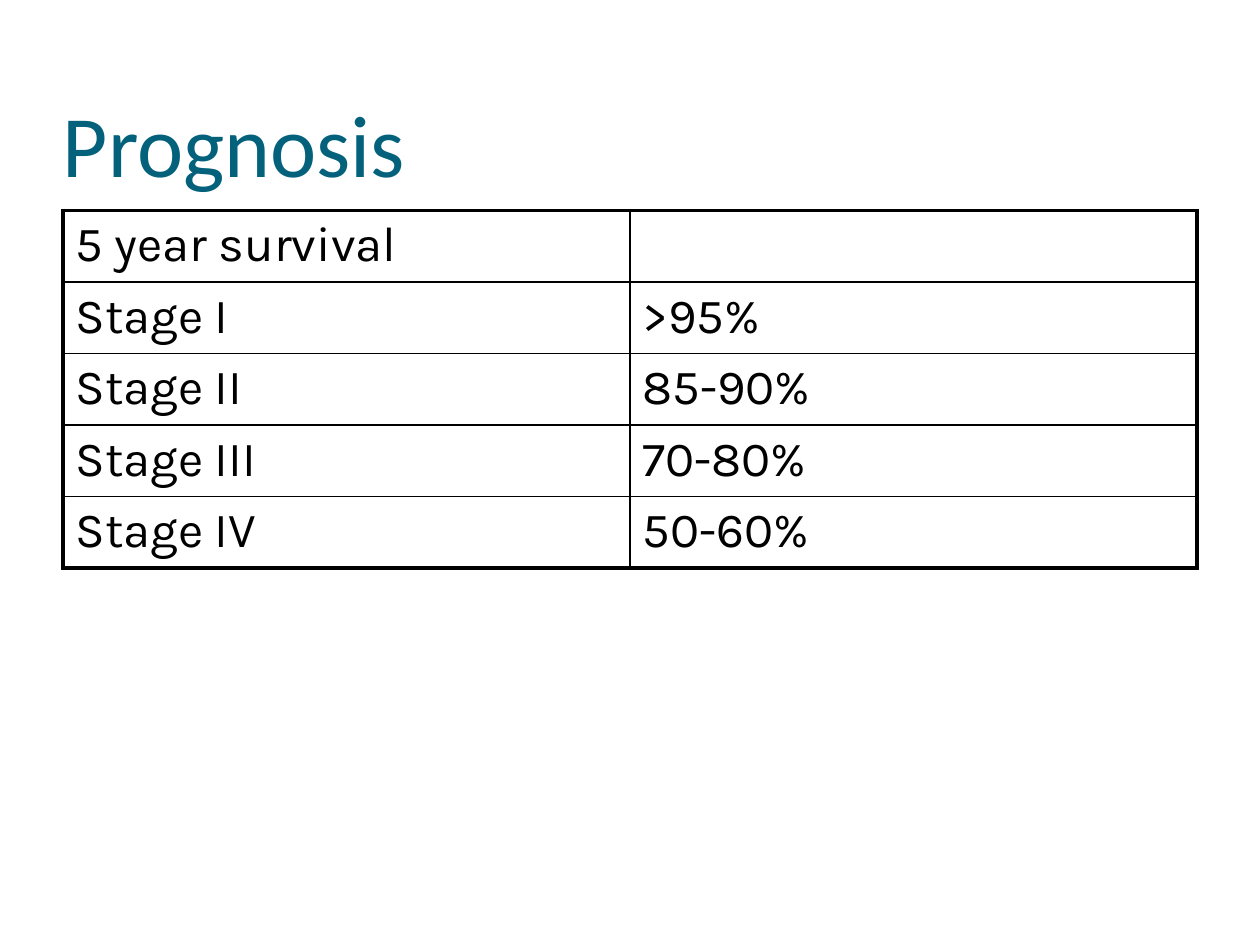
from lxml import etree
from pptx import Presentation
from pptx.dml.color import RGBColor
from pptx.enum import text
from pptx.oxml import ns
from pptx.util import Inches, Pt

TEAL = RGBColor(0x04, 0x61, 0x7B)
BLACK = RGBColor(0, 0, 0)
TITLE_FONT = {"name": "Calibri", "size": Pt(50), "bold": False}
CELL_FONT = {"name": "Karla", "size": Pt(28), "bold": False}
ROWS = [
    ("5 year survival", ""),
    ("Stage I", ">95%"),
    ("Stage II", "85-90%"),
    ("Stage III", "70-80%"),
    ("Stage IV", "50-60%"),
]


def set_font(font, formats, color):
    for key, value in formats.items():
        setattr(font, key, value)
    font.color.rgb = color


def set_border(cell, index, side, width):
    ln = etree.Element(ns.qn(f"a:{side}"), w=str(Pt(width)))
    fill = etree.SubElement(ln, ns.qn("a:solidFill"))
    etree.SubElement(fill, ns.qn("a:srgbClr"), val=str(BLACK))
    cell._tc.get_or_add_tcPr().insert(index, ln)


prs = Presentation()
prs.slide_width = Inches(10)
prs.slide_height = Inches(7.5)
s = prs.slides.add_slide(prs.slide_layouts[6])

sp = s.shapes.add_textbox(Inches(0.5), Inches(0.3), Inches(9), Inches(1.25))
tf = sp.text_frame
frame_format = {
    "word_wrap": True,
    "vertical_anchor": text.MSO_ANCHOR.BOTTOM,
    "margin_left": 0,
    "margin_right": 0,
    "margin_top": Inches(0.05),
    "margin_bottom": 0,
}
for key, value in frame_format.items():
    setattr(tf, key, value)
p = tf.paragraphs[0]
p.alignment = text.PP_ALIGN.LEFT
r = p.add_run()
r.text = "Prognosis"
set_font(r.font, TITLE_FONT, TEAL)

row_height = Inches(0.55)
table = s.shapes.add_table(
    len(ROWS), 2, Inches(0.5), Inches(1.67), Inches(9), row_height * len(ROWS)
).table
table.first_row = False
table.horz_banding = False

last = len(ROWS) - 1
for i, row in enumerate(ROWS):
    table.rows[i].height = row_height
    for j, value in enumerate(row):
        cell = table.cell(i, j)
        cell.fill.background()
        p = cell.text_frame.paragraphs[0]
        if value:
            r = p.add_run()
            r.text = value
            set_font(r.font, CELL_FONT, BLACK)
        else:
            set_font(p.font, CELL_FONT, BLACK)
        outer = {"lnL": j == 0, "lnR": j == 1, "lnT": i == 0, "lnB": i == last}
        for k, (side, is_outer) in enumerate(outer.items()):
            set_border(cell, k, side, 2.25 if is_outer else 1)

prs.save("out.pptx")
